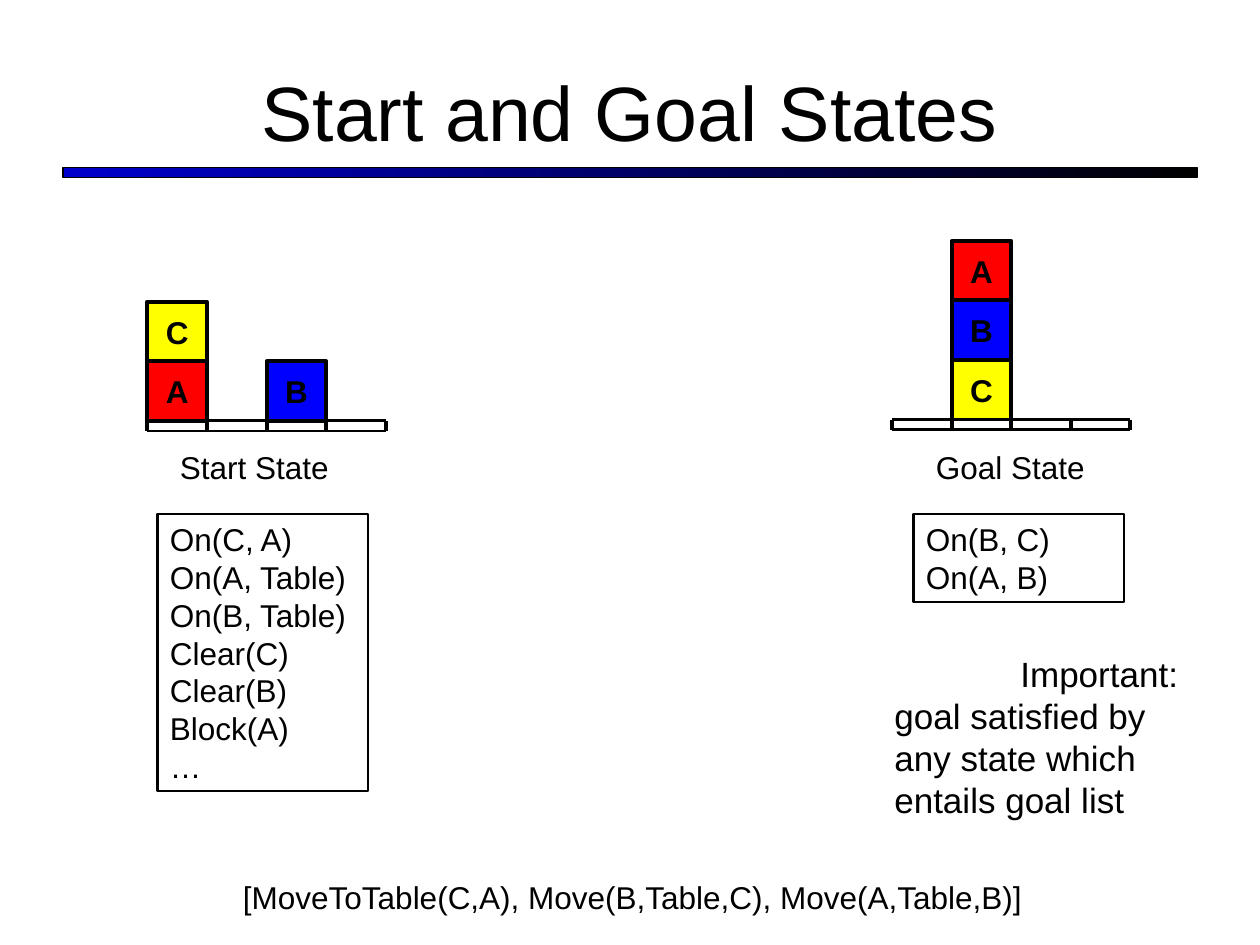
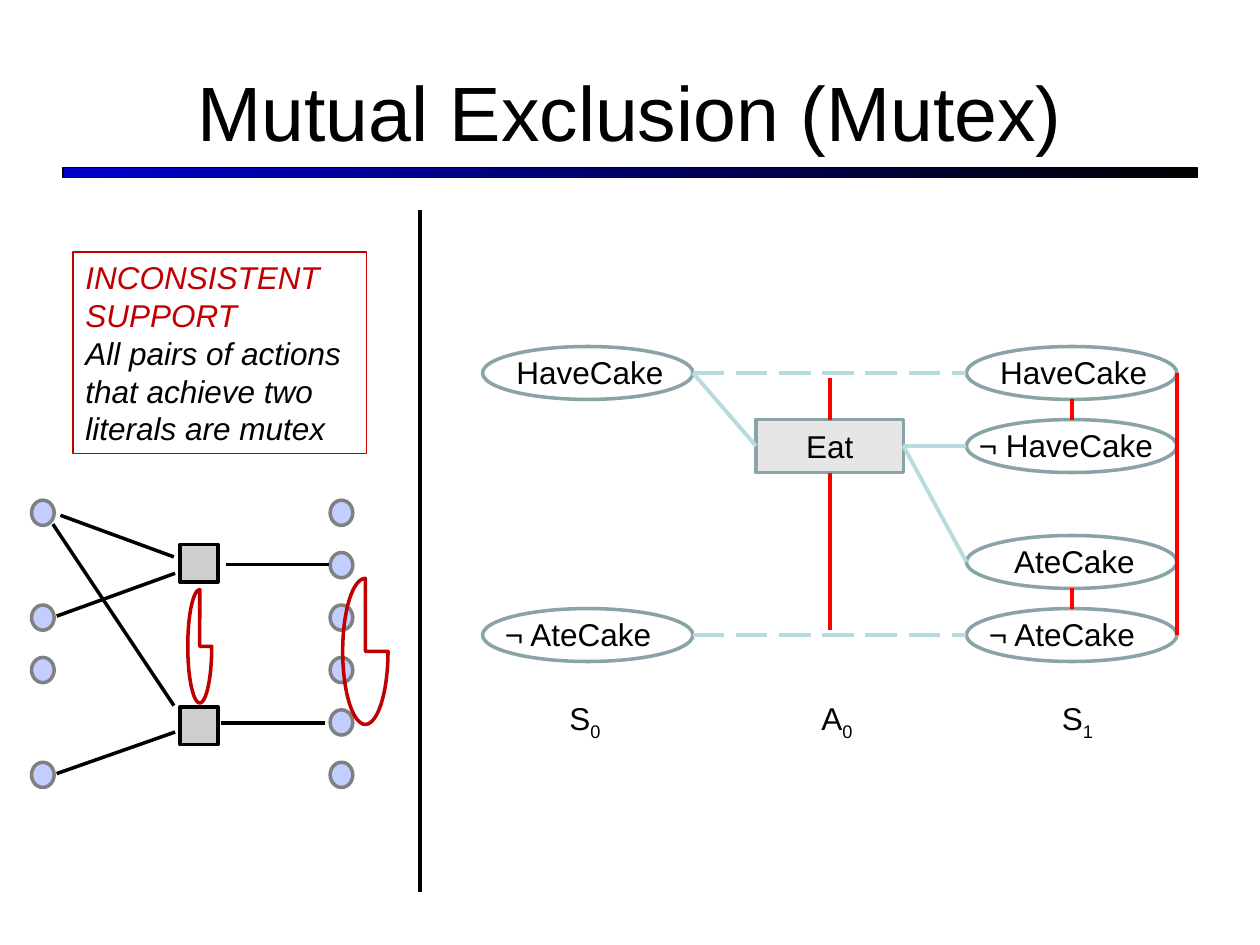
from dataclasses import dataclass

from lxml.etree import SubElement
from pptx import Presentation
from pptx.dml.color import RGBColor
from pptx.enum.dml import MSO_LINE
from pptx.enum.shapes import MSO_CONNECTOR as Connector, MSO_SHAPE as Preset
from pptx.enum.text import MSO_ANCHOR as Anchor, PP_ALIGN as Align
from pptx.oxml.ns import qn
from pptx.util import Emu, Inches, Pt


@dataclass(frozen=True)
class Theme:
    font: str = "Arial"
    title_size: float = 44
    note_size: float = 20
    body_size: float = 18
    thin: float = 0.75
    normal: float = 1.5
    medium: float = 2
    thick: float = 2.25
    black: str = "000000"
    band: str = "0000CC"
    red: str = "FF0000"
    yellow: str = "FFFF00"
    blue: str = "0000FF"
    crimson: str = "C00000"
    outline: str = "89A4A7"
    link: str = "B6DCDF"
    action: str = "E6E6E6"
    dot: str = "C1CEFF"
    dot_line: str = "808080"
    square: str = "CECECE"


THEME = Theme()
WIDTH, HEIGHT = 10, 7.5

# ---- Content: Start and Goal States ----
BLOCK_COLOURS = {"A": THEME.red, "B": THEME.blue, "C": THEME.yellow}
# Each world: left edge, table top, stacks by column (bottom first), facts
WORLDS = [
    ("Start State", 1.17, 3.34, {0: "AC", 2: "B"},
     ["On(C, A)", "On(A, Table)", "On(B, Table)", "Clear(C)", "Clear(B)",
      "Block(A)", "…"]),
    ("Goal State", 7.08, 3.33, {1: "CBA"}, ["On(B, C)", "On(A, B)"]),
]
FACT_LEFTS = [1.25, 7.25]
IMPORTANT = "Important: goal satisfied by any state which entails goal list"
PLAN = "[MoveToTable(C,A), Move(B,Table,C), Move(A,Table,B)]"
TABLE_COLUMNS, CELL, TABLE_DEPTH = 4, 0.473, 0.08

# ---- Content: Mutual Exclusion ----
RULE_NAME = "INCONSISTENT SUPPORT"
RULE_TEXT = "All pairs of actions that achieve two literals are mutex"
LITERAL_WIDTH, LITERAL_HEIGHT = 1.67, 0.42
STATE_LEFTS = [3.83, 7.67]
ROW_CENTRES = [2.96, 3.54, 4.46, 5.04]
# state, row, wording, indent of the wording inside the ellipse
LITERALS = [
    (0, 0, "HaveCake", 0.17), (0, 3, "¬ AteCake", 0.08),
    (1, 0, "HaveCake", 0.17), (1, 1, "¬ HaveCake", 0),
    (1, 2, "AteCake", 0.28), (1, 3, "¬ AteCake", 0.08),
]
LEVELS = [("S", "0", 4.42), ("A", "0", 6.42), ("S", "1", 8.33)]
EAT_LEFT, EAT_WIDTH = 6, 1.17

DOT_WIDTH, DOT_HEIGHT, DOT_TOP, DOT_STEP = 0.18, 0.2, 3.97, 0.416
DOT_COLUMNS = {0.25: (0, 2, 3, 5), 2.62: range(6)}
SQUARE_LEFT, SQUARE_SIZE, SQUARE_TOPS = 1.43, 0.3, (4.32, 5.61)
SUPPORT_LINES = [
    ((0.45, 4.89), (1.39, 4.55)), ((0.48, 4.09), (1.38, 4.42)),
    ((1.79, 4.48), (2.61, 4.48)), ((0.45, 6.14), (1.39, 5.81)),
    ((0.42, 4.16), (1.38, 5.6)), ((1.75, 5.74), (2.58, 5.74)),
]
MUTEX_PIES = [(2.72, 4.59, 0.36, 1.16), (1.49, 4.68, 0.19, 0.9)]


def colour(value):
    return RGBColor.from_string(value)


def box_of(left, top, width, height):
    return [Inches(length) for length in (left, top, width, height)]


def add_run(paragraph, text, size=THEME.body_size, ink=THEME.black,
            bold=False, italic=False, subscript=False):
    run = paragraph.add_run()
    run.text = text
    font = run.font
    font.name, font.size, font.color.rgb = THEME.font, Pt(size), colour(ink)
    font.bold, font.italic = bold, italic
    if subscript:
        font_properties = run._r.get_or_add_rPr()
        font_properties.set("baseline", "-25000")


def fill_text(shape, lines, align=Align.LEFT, anchor=Anchor.TOP, wrap=True):
    """Write lines into shape; each line is a list of (text, style) runs."""
    frame = shape.text_frame
    frame.word_wrap, frame.vertical_anchor = wrap, anchor
    for index, runs in enumerate(lines):
        paragraph = frame.add_paragraph() if index else frame.paragraphs[0]
        paragraph.alignment = align
        for text, style in runs:
            add_run(paragraph, text, **style)
    return frame


def add_text(slide, box, *runs, **layout):
    return fill_text(slide.shapes.add_textbox(*box_of(*box)), [runs], **layout)


def add_preset(slide, preset, box, line, weight, fill=None):
    shape = slide.shapes.add_shape(preset, *box_of(*box))
    shape.shadow.inherit = False
    shape.line.color.rgb, shape.line.width = colour(line), Pt(weight)
    if fill:
        shape.fill.solid()
        shape.fill.fore_color.rgb = colour(fill)
    else:
        shape.fill.background()
    return shape


def add_line(slide, start, end, ink=THEME.black, weight=THEME.thick,
             dash=None, kind=Connector.STRAIGHT):
    ends = [Inches(length) for length in (*start, *end)]
    connector = slide.shapes.add_connector(kind, *ends)
    connector.line.color.rgb, connector.line.width = colour(ink), Pt(weight)
    if dash:
        connector.line.dash_style = dash
    SubElement(connector.element.spPr, qn("a:effectLst"))


def add_titled_slide(presentation, title):
    slide = presentation.slides.add_slide(presentation.slide_layouts[6])
    margin = WIDTH / 20
    band = add_preset(slide, Preset.RECTANGLE,
                      (margin, 1.33, WIDTH - 2 * margin, 0.08),
                      THEME.black, THEME.thin)
    band.fill.gradient()
    band.fill.gradient_angle = 0
    for stop, ink in zip(band.fill.gradient_stops, (THEME.band, THEME.black)):
        stop.color.rgb = colour(ink)
    add_text(slide, (margin, 0.25, WIDTH - 2 * margin, HEIGHT / 6),
             (title, {"size": THEME.title_size}),
             align=Align.CENTER, anchor=Anchor.MIDDLE)
    return slide


def add_world(slide, left, table_top, stacks):
    """Draw a table of equal cells with blocks stacked on its columns."""
    right, bottom = left + TABLE_COLUMNS * CELL, table_top + TABLE_DEPTH
    for y in (bottom, table_top):
        add_line(slide, (left, y), (right, y), weight=THEME.normal)
    for column in range(TABLE_COLUMNS + 1):
        x = left + column * CELL
        add_line(slide, (x, table_top), (x, bottom))
    for column, stack in stacks.items():
        for level, name in enumerate(stack, start=1):
            block = add_preset(
                slide, Preset.RECTANGLE,
                (left + column * CELL, table_top - level * CELL, CELL, CELL),
                THEME.black, THEME.thick, BLOCK_COLOURS[name])
            fill_text(block, [[(name, {"bold": True})]], align=Align.CENTER,
                      anchor=Anchor.MIDDLE, wrap=False)


def build_states_slide(presentation):
    slide = add_titled_slide(presentation, "Start and Goal States")
    for (name, left, top, stacks, facts), fact_left in zip(WORLDS, FACT_LEFTS):
        add_world(slide, left, top, stacks)
        add_text(slide, (fact_left + 0.08, 3.51, 1.58, 0.4), (name, {}))
        fact_box = add_preset(slide, Preset.RECTANGLE,
                              (fact_left, 4.08, 1.67, 0.1 + 0.3 * len(facts)),
                              THEME.black, THEME.normal)
        fill_text(fact_box, [[(fact, {})] for fact in facts])
    note = add_text(slide, (7, 5.13, 2.67, 1.62),
                    (IMPORTANT, {"size": THEME.note_size}))
    note_properties = note.paragraphs[0]._p.get_or_add_pPr()
    note_properties.set("indent", str(Inches(1)))
    add_text(slide, (1.83, 6.92, 6.42, 0.4), (PLAN, {}))


def add_planning_graph(slide):
    for state, row, wording, indent in LITERALS:
        left = STATE_LEFTS[state]
        top = ROW_CENTRES[row] - LITERAL_HEIGHT / 2
        add_preset(slide, Preset.OVAL,
                   (left, top, LITERAL_WIDTH, LITERAL_HEIGHT),
                   THEME.outline, THEME.medium)
        add_text(slide, (left + indent, top, 1.83, 0.4), (wording, {}))

    have, not_have, ate, not_ate = ROW_CENTRES
    half = LITERAL_HEIGHT / 2
    eat = add_preset(slide, Preset.RECTANGLE,
                     (EAT_LEFT, not_have - half, EAT_WIDTH, LITERAL_HEIGHT),
                     THEME.outline, THEME.medium, THEME.action)
    fill_text(eat, [[("Eat", {})]], align=Align.CENTER, anchor=Anchor.MIDDLE)

    before, after = STATE_LEFTS[0] + LITERAL_WIDTH, STATE_LEFTS[1]
    eat_right = EAT_LEFT + EAT_WIDTH
    add_line(slide, (before, have), (EAT_LEFT, not_have), THEME.link)
    for row in (not_have, ate):
        add_line(slide, (eat_right, not_have), (after, row), THEME.link)
    for row in (have, not_ate):
        add_line(slide, (before, row), (after, row), THEME.link,
                 dash=MSO_LINE.LONG_DASH)

    eat_centre = EAT_LEFT + EAT_WIDTH / 2
    literal_centre = after + LITERAL_WIDTH / 2
    for x, top, bottom in [
        (literal_centre, have + half, not_have - half),
        (literal_centre, ate + half, not_ate - half),
        (eat_centre, have + 0.04, not_have - half),
        (eat_centre, not_have + half, not_ate - 0.04),
    ]:
        add_line(slide, (x, top), (x, bottom), THEME.red)
    edge = after + LITERAL_WIDTH
    for top, bottom in ((have, ate), (not_have, not_ate)):
        add_line(slide, (edge, top), (edge, bottom), THEME.red,
                 kind=Connector.CURVE)

    for letter, index, left in LEVELS:
        add_text(slide, (left, 5.5, 0.5, 0.44),
                 (letter, {}), (index, {"subscript": True}))


def add_support_sketch(slide):
    for left, rows in DOT_COLUMNS.items():
        for row in rows:
            add_preset(slide, Preset.OVAL,
                       (left, DOT_TOP + row * DOT_STEP, DOT_WIDTH, DOT_HEIGHT),
                       THEME.dot_line, THEME.medium, THEME.dot)
    for top in SQUARE_TOPS:
        add_preset(slide, Preset.RECTANGLE,
                   (SQUARE_LEFT, top, SQUARE_SIZE, SQUARE_SIZE),
                   THEME.black, THEME.medium, THEME.square)
    for start, end in SUPPORT_LINES:
        add_line(slide, start, end, weight=THEME.medium)
    for box in MUTEX_PIES:
        pie = add_preset(slide, Preset.PIE, box, THEME.crimson, THEME.medium)
        pie.adjustments[0], pie.adjustments[1] = 0, 162


def build_mutex_slide(presentation):
    slide = add_titled_slide(presentation, "Mutual Exclusion (Mutex)")
    add_planning_graph(slide)
    rule = add_preset(slide, Preset.RECTANGLE, (0.58, 2, 2.33, 1.6),
                      THEME.crimson, THEME.thin)
    fill_text(rule, [[(RULE_NAME, {"ink": THEME.crimson, "italic": True})],
                     [(RULE_TEXT, {"italic": True})]])
    add_support_sketch(slide)
    add_line(slide, (WIDTH / 3, 1.67), (WIDTH / 3, 7.08))


def main():
    presentation = Presentation()
    presentation.slide_width = Emu(Inches(WIDTH))
    presentation.slide_height = Emu(Inches(HEIGHT))
    build_states_slide(presentation)
    build_mutex_slide(presentation)
    presentation.save("out.pptx")


if __name__ == "__main__":
    main()
